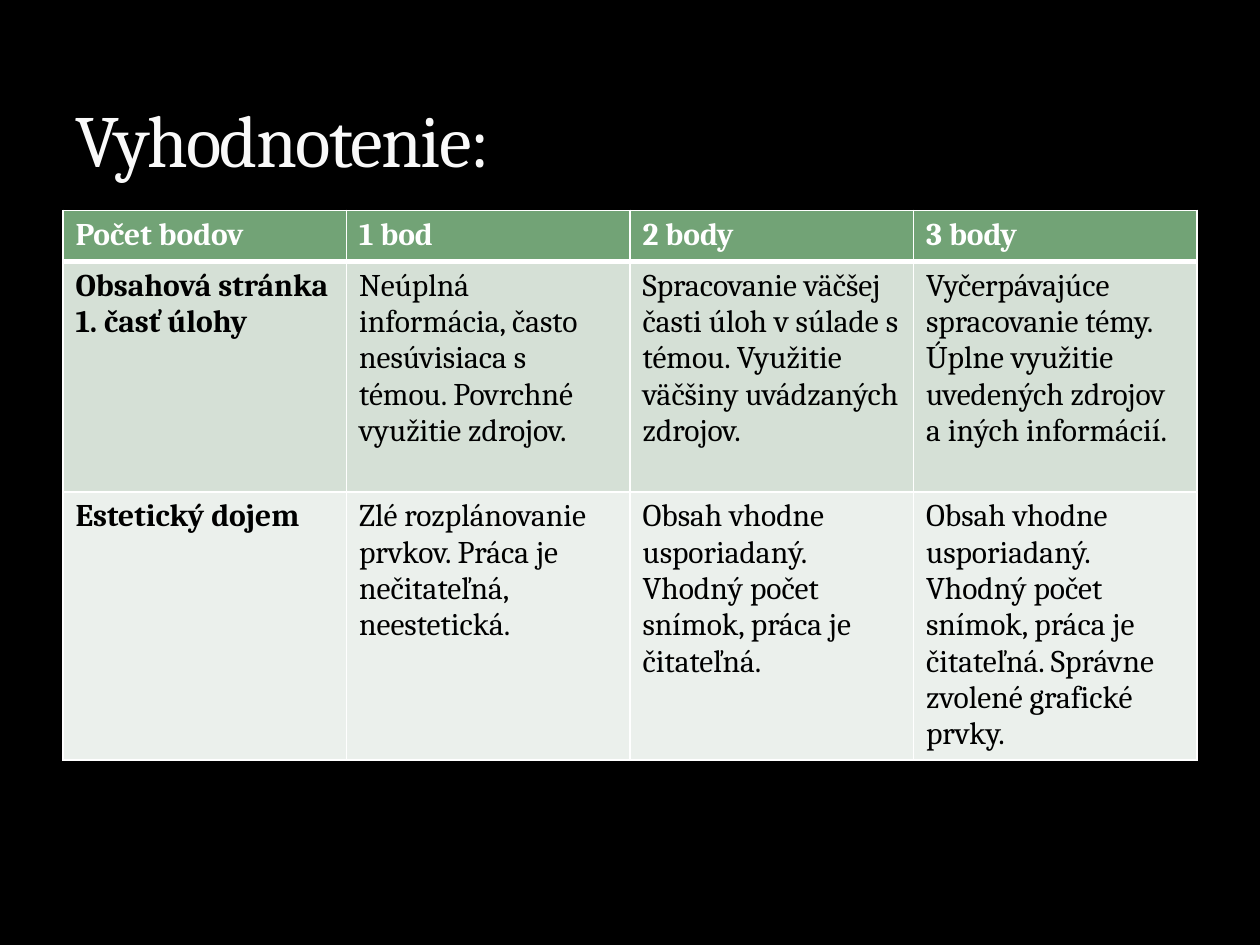
from lxml import etree
from pptx import Presentation
from pptx.dml.color import RGBColor
from pptx.enum import text
from pptx.oxml import ns
from pptx.util import Cm, Pt

FONT = "Cambria"
COLORS = {
    "background": "000000",
    "title": "F9F9F9",
    "header": "72A376",
    "band_dark": "D5E0D6",
    "band_light": "EBF0EC",
    "white": "FFFFFF",
    "black": "000000",
}
ROW_FILLS = ["header", "band_dark", "band_light"]
ROW_HEIGHTS = [1.03, 4.65, 5.4]
COLUMN_WIDTH = 5.715
CRITERIA = [
    ["Počet bodov", "1 bod", "2 body", "3 body"],
    [
        "Obsahová stránka\n1. časť úlohy",
        "Neúplná informácia, často nesúvisiaca s témou. Povrchné využitie zdrojov.",
        "Spracovanie väčšej časti úloh v súlade s témou. Využitie väčšiny uvádzaných zdrojov.",
        "Vyčerpávajúce spracovanie témy. Úplne využitie uvedených zdrojov a iných informácií.",
    ],
    [
        "Estetický dojem",
        "Zlé rozplánovanie prvkov. Práca je nečitateľná, neestetická.",
        "Obsah vhodne usporiadaný. Vhodný počet snímok, práca je čitateľná.",
        "Obsah vhodne usporiadaný. Vhodný počet snímok, práca je čitateľná. "
        "Správne zvolené grafické prvky.",
    ],
]


def rgb(name):
    return RGBColor.from_string(COLORS[name])


def format_runs(text_frame, size, color, bold=False):
    for paragraph in text_frame.paragraphs:
        for run in paragraph.runs:
            run.font.name = FONT
            run.font.size = Pt(size)
            run.font.bold = bold
            run.font.color.rgb = rgb(color)


def set_border(cell, side, width):
    properties = cell._tc.get_or_add_tcPr()
    line = etree.SubElement(properties, ns.qn(f"a:ln{side}"), w=str(Pt(width)))
    fill = etree.SubElement(line, ns.qn("a:solidFill"))
    etree.SubElement(fill, ns.qn("a:srgbClr"), val=COLORS["white"])


def add_title(slide, wording):
    title = slide.shapes.title
    title.left, title.top, title.width, title.height = Cm(1.27), Cm(0.43), Cm(22.86), Cm(3.38)
    frame = title.text_frame
    frame.text = wording
    frame.word_wrap = True
    frame.auto_size = text.MSO_AUTO_SIZE.NONE
    frame.vertical_anchor = text.MSO_ANCHOR.BOTTOM
    frame.paragraphs[0].alignment = text.PP_ALIGN.LEFT
    format_runs(frame, 42, "title")
    frame.paragraphs[0].runs[0].font._element.set("spc", "-100")


def format_cell(cell, row, column):
    is_header = row == 0
    for side in "LRTB":
        thick = (is_header and side == "B") or (row == 1 and side == "T")
        set_border(cell, side, 3 if thick else 1)
    cell.fill.solid()
    cell.fill.fore_color.rgb = rgb(ROW_FILLS[row])
    color = "white" if is_header else "black"
    format_runs(cell.text_frame, 18, color, bold=is_header or column == 0)


def add_criteria_table(slide, rows):
    columns = len(rows[0])
    frame = slide.shapes.add_table(
        len(rows), columns, Cm(1.27), Cm(4.24),
        Cm(COLUMN_WIDTH * columns), Cm(sum(ROW_HEIGHTS)),
    )
    table = frame.table
    for row, wordings in enumerate(rows):
        table.rows[row].height = Cm(ROW_HEIGHTS[row])
        for column, wording in enumerate(wordings):
            cell = table.cell(row, column)
            cell.text_frame.text = wording
            format_cell(cell, row, column)


def main():
    presentation = Presentation()
    presentation.slide_width, presentation.slide_height = Cm(25.4), Cm(19.05)
    slide = presentation.slides.add_slide(presentation.slide_layouts[5])
    slide.background.fill.solid()
    slide.background.fill.fore_color.rgb = rgb("background")
    add_criteria_table(slide, CRITERIA)
    add_title(slide, "Vyhodnotenie:")
    presentation.save("out.pptx")


if __name__ == "__main__":
    main()
